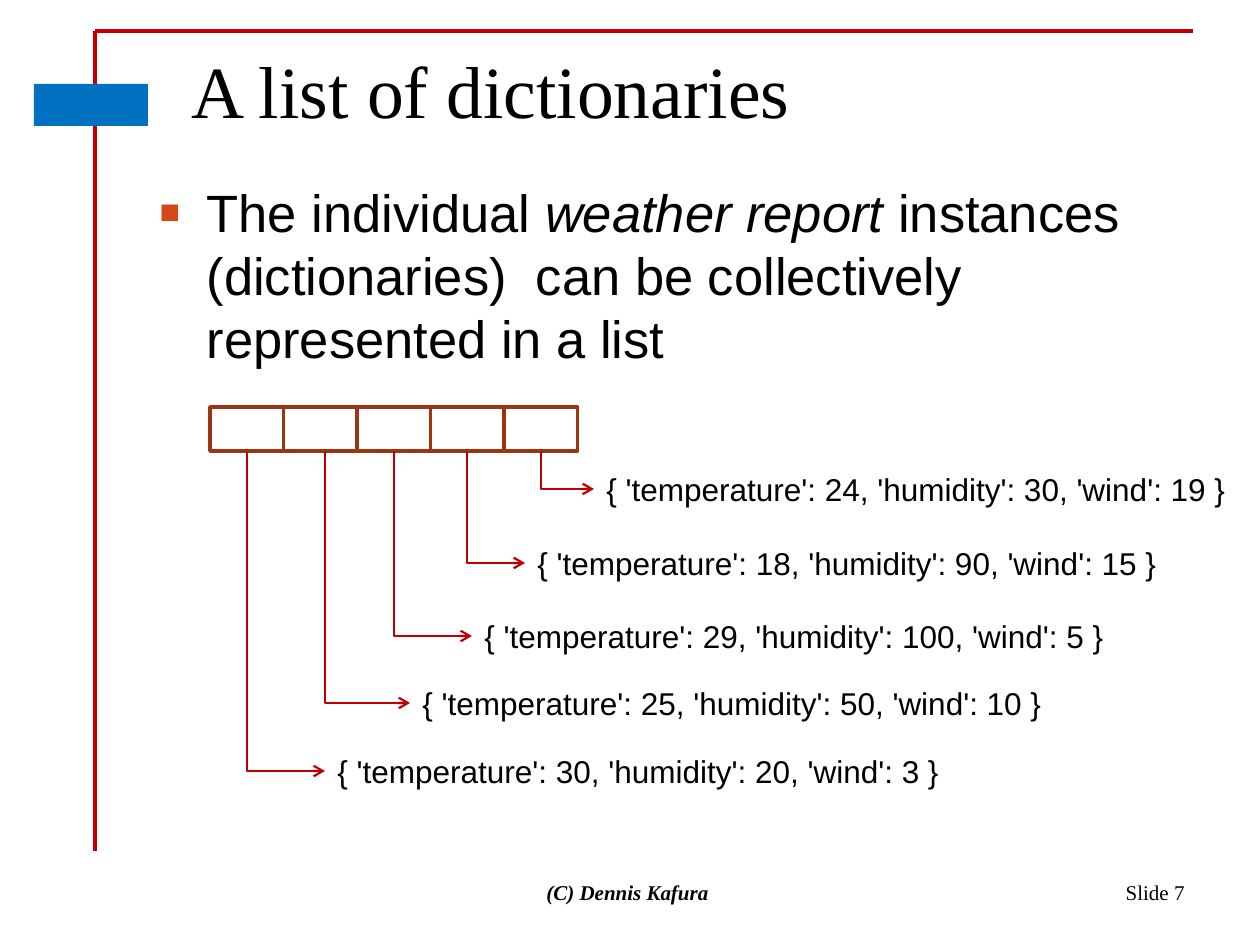
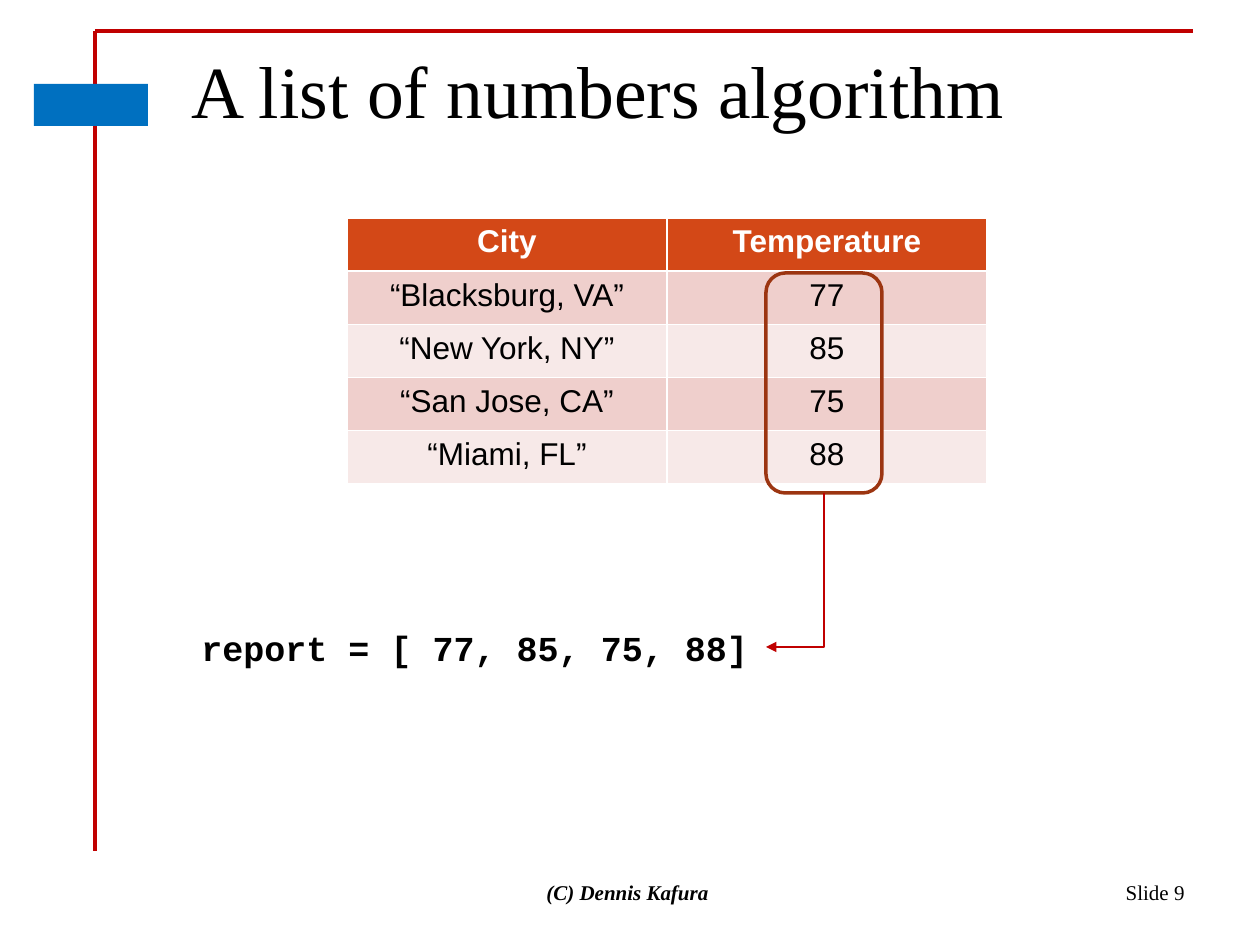
from lxml import etree
from pptx import Presentation
from pptx.dml.color import RGBColor
from pptx.enum.shapes import MSO_CONNECTOR, MSO_SHAPE
from pptx.enum.text import MSO_ANCHOR, PP_ALIGN
from pptx.oxml.ns import qn
from pptx.util import Emu, Pt

STRAIGHT, ELBOW = MSO_CONNECTOR.STRAIGHT, MSO_CONNECTOR.ELBOW
RECT, ROUND_RECT = MSO_SHAPE.RECTANGLE, MSO_SHAPE.ROUNDED_RECTANGLE
LEFT, CENTER, RIGHT = PP_ALIGN.LEFT, PP_ALIGN.CENTER, PP_ALIGN.RIGHT
TOP, MIDDLE = MSO_ANCHOR.TOP, MSO_ANCHOR.MIDDLE

BLACK = RGBColor(0x00, 0x00, 0x00)
WHITE = RGBColor(0xFF, 0xFF, 0xFF)
RED = RGBColor(0xC0, 0x00, 0x00)
BLUE = RGBColor(0x00, 0x70, 0xC0)
ORANGE = RGBColor(0xD3, 0x48, 0x17)
BROWN = RGBColor(0x9C, 0x35, 0x11)
BAND_DARK = RGBColor(0xEF, 0xCF, 0xCC)
BAND_LIGHT = RGBColor(0xF7, 0xE9, 0xE8)

SANS, SERIF, MONO = "Arial", "Times New Roman", "Courier New"
EMU_PER_PX = 914400 / 126

# Start x of the arrow, then label position and text
REPORTS = [
    (247, 325, 746, "{ 'temperature': 30, 'humidity': 20, 'wind': 3 }"),
    (325, 410, 678, "{ 'temperature': 25, 'humidity': 50, 'wind': 10 }"),
    (394, 472, 611, "{ 'temperature': 29, 'humidity': 100, 'wind': 5 }"),
    (467, 525, 538, "{ 'temperature': 18, 'humidity': 90, 'wind': 15 }"),
    (541, 594, 464, "{ 'temperature': 24, 'humidity': 30, 'wind': 19 }"),
]
CITIES = [
    ("City", "Temperature"),
    ("“Blacksburg, VA”", "77"),
    ("“New York, NY”", "85"),
    ("“San Jose, CA”", "75"),
    ("“Miami, FL”", "88"),
]


def px(n):
    return Emu(round(n * EMU_PER_PX))


def style(font, size, name=SANS, color=BLACK, bold=False, italic=False):
    font.size, font.name = Pt(size), name
    font.bold, font.italic = bold, italic
    font.color.rgb = color


def place(s, x, y, w, h):
    s.left, s.top, s.width, s.height = px(x), px(y), px(w), px(h)


def add_text(slide, x, y, w, h, text, size, align=LEFT, anchor=TOP,
             wrap=True, **font):
    s = slide.shapes.add_textbox(px(x), px(y), px(w), px(h))
    tf = s.text_frame
    tf.word_wrap, tf.vertical_anchor = wrap, anchor
    p = tf.paragraphs[0]
    p.text, p.alignment = text, align
    style(p.font, size, **font)


def add_box(slide, kind, x, y, w, h, fill=None):
    """Brown outline, or a plain filled shape when a fill is given."""
    s = slide.shapes.add_shape(kind, px(x), px(y), px(w), px(h))
    s.shadow.inherit = False
    if fill:
        s.fill.solid()
        s.fill.fore_color.rgb = fill
        s.line.fill.background()
    else:
        s.fill.background()
        s.line.color.rgb, s.line.width = BROWN, Pt(2)


def add_line(slide, x1, y1, x2, y2, width, kind=STRAIGHT, head=None):
    c = slide.shapes.add_connector(kind, px(x1), px(y1), px(x2), px(y2))
    c.line.color.rgb, c.line.width = RED, Pt(width)
    sp_pr = c.element.spPr
    if head:
        etree.SubElement(sp_pr.find(qn("a:ln")), qn("a:tailEnd"), type=head)
    etree.SubElement(sp_pr, qn("a:effectLst"))
    return c


def add_down_arrow(slide, x1, y1, x2, y2, head):
    """Arrow that runs down, then turns once to the right or left."""
    w, h = y2 - y1, abs(x2 - x1)
    x, y = (x1 + x2 - w) / 2, (y1 + y2 - h) / 2
    c = add_line(slide, x, y, x + w, y + h, 1.25, ELBOW, head)
    sp_pr = c.element.spPr
    sp_pr.find(qn("a:prstGeom")).set("prst", "bentConnector2")
    if x2 > x1:
        c.rotation = 270
        sp_pr.find(qn("a:xfrm")).set("flipH", "1")
    else:
        c.rotation = 90


def add_bullet(p, char, color, percent, indent):
    p_pr = p._p.get_or_add_pPr()
    p_pr.set("marL", str(px(indent)))
    p_pr.set("indent", str(-px(indent)))
    clr = etree.SubElement(p_pr, qn("a:buClr"))
    etree.SubElement(clr, qn("a:srgbClr"), val=str(color))
    etree.SubElement(p_pr, qn("a:buSzPct"), val=str(percent * 1000))
    etree.SubElement(p_pr, qn("a:buFont"), typeface=SANS)
    etree.SubElement(p_pr, qn("a:buChar"), char=char)


def add_body(slide, runs):
    s = slide.placeholders[1]
    place(s, 147, 174, 1029, 640)
    tf = s.text_frame
    tf.vertical_anchor = TOP
    p = tf.paragraphs[0]
    add_bullet(p, "■", ORANGE, 65, 47)
    p.space_before, p.line_spacing = Pt(0), 1.0
    style(p.font, 30)
    for text, italic in runs:
        r = p.add_run()
        r.text, r.font.italic = text, italic


def add_table(slide, x, y, w, h, rows):
    table = slide.shapes.add_table(len(rows), len(rows[0]),
                                   px(x), px(y), px(w), px(h)).table
    for i, row in enumerate(rows):
        header = i == 0
        fill = ORANGE if header else BAND_DARK if i % 2 else BAND_LIGHT
        for j, text in enumerate(row):
            cell = table.cell(i, j)
            cell.fill.solid()
            cell.fill.fore_color.rgb = fill
            p = cell.text_frame.paragraphs[0]
            p.text, p.alignment = text, CENTER
            style(p.font, 18, color=WHITE if header else BLACK, bold=header)


def add_slide(prs, layout, title, number):
    """Slide with the red frame, blue marker, title and footers."""
    slide = prs.slides.add_slide(prs.slide_layouts[layout])
    # Frame and marker
    add_line(slide, 95, 31, 1193, 31, 2)
    add_line(slide, 95, 31, 95, 84, 1.75)
    add_line(slide, 95, 126, 95, 851, 1.75)
    add_box(slide, RECT, 34, 84, 114, 42, BLUE)
    # Title
    s = slide.shapes.title
    place(s, 179, 38, 1018, 98)
    tf = s.text_frame
    tf.vertical_anchor, tf.margin_top = TOP, px(7)
    p = tf.paragraphs[0]
    p.text, p.alignment = title, LEFT
    style(p.font, 42, SERIF)
    # Footers
    add_text(slide, 903, 861, 294, 63, f"Slide {number}", 12, RIGHT, MIDDLE,
             name=SERIF)
    add_text(slide, 428, 861, 399, 63, "(C) Dennis Kafura", 12, CENTER,
             MIDDLE, name=SERIF, bold=True, italic=True)
    return slide


def dictionaries_slide(prs):
    slide = add_slide(prs, 1, "A list of dictionaries", 7)
    add_body(slide, [
        ("The individual ", False),
        ("weather report ", True),
        ("instances (dictionaries)  can be collectively represented in a list",
         False),
    ])
    # List cells, each pointing to its dictionary
    cell_w, cell_top, cell_h = 73.5, 407, 44
    for i, (start_x, x, y, text) in enumerate(REPORTS):
        add_box(slide, RECT, 210 + i * cell_w, cell_top, cell_w, cell_h)
        add_text(slide, x, y, 656, 51, text, 18, wrap=False)
        add_down_arrow(slide, start_x, cell_top + cell_h, x, y + 25, "arrow")


def numbers_slide(prs):
    slide = add_slide(prs, 5, "A list of numbers algorithm", 9)
    add_text(slide, 189, 620, 577, 55, "report = [ 77, 85, 75, 88]", 20,
             name=MONO, bold=True)
    add_table(slide, 347, 218, 640, 266, CITIES)
    # Temperatures gathered into the list
    add_box(slide, ROUND_RECT, 766, 273, 116, 220)
    add_down_arrow(slide, 824, 493, 766, 647, "triangle")


def main():
    prs = Presentation()
    prs.slide_width, prs.slide_height = px(1260), px(945)
    dictionaries_slide(prs)
    numbers_slide(prs)
    prs.save("out.pptx")


if __name__ == "__main__":
    main()
